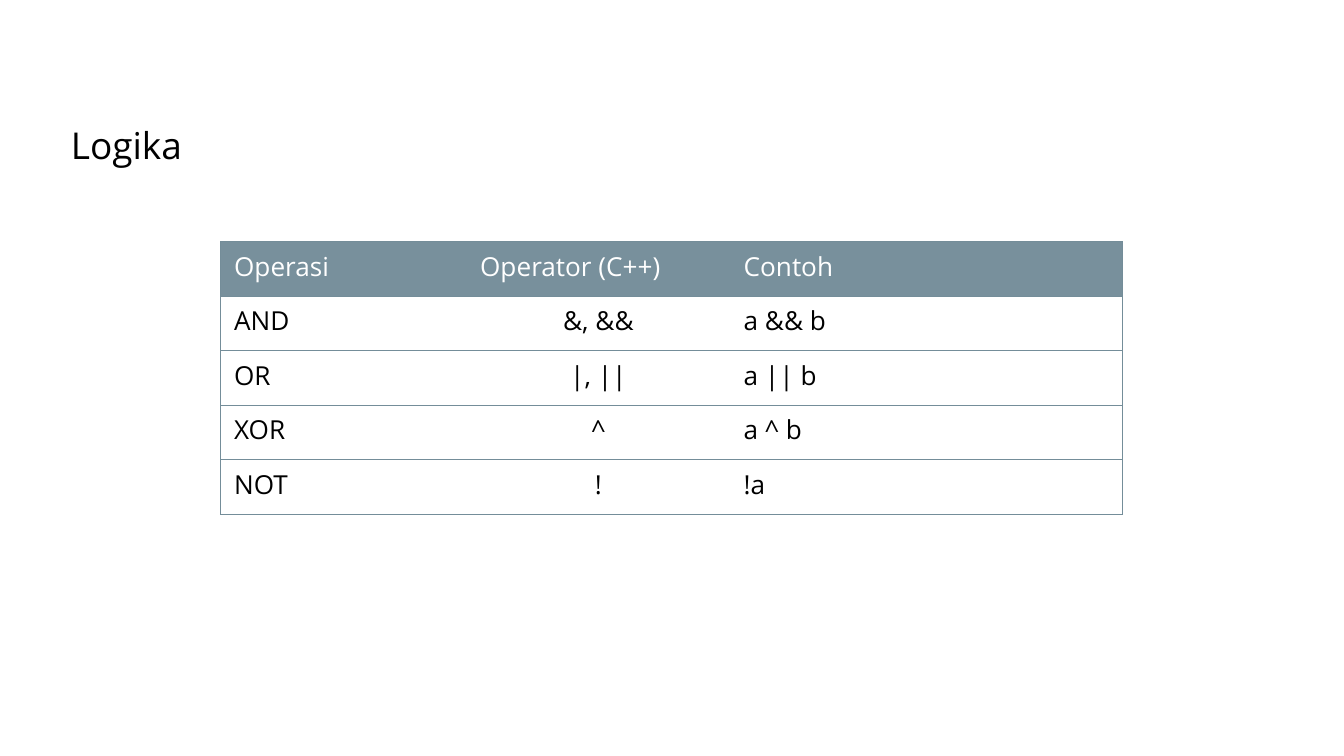
from lxml.etree import SubElement
from pptx import Presentation
from pptx.dml.color import RGBColor
from pptx.enum.text import MSO_ANCHOR, PP_ALIGN
from pptx.oxml.ns import qn
from pptx.util import Cm, Pt

BLACK = RGBColor(0x00, 0x00, 0x00)
WHITE = RGBColor(0xFF, 0xFF, 0xFF)
HEADER_FILL = RGBColor(0x78, 0x90, 0x9C)
BORDER = RGBColor(0x74, 0x8D, 0x99)

OPERATORS = [
    ("Operasi", "Operator (C++)", "Contoh"),
    ("AND", "&, &&", "a && b"),
    ("OR", "|, ||", "a || b"),
    ("XOR", "^", "a ^ b"),
    ("NOT", "!", "!a"),
]
COLUMN_WIDTHS = (4.65, 4.98, 7.42)
ROW_HEIGHT = 1.03


class SlideBuilder:
    font_name = "Open Sans"

    def __init__(self, presentation):
        self.slide = presentation.slides.add_slide(presentation.slide_layouts[5])

    def add_text(self, text_frame, text, size, color, alignment=PP_ALIGN.LEFT):
        paragraph = text_frame.paragraphs[0]
        paragraph.alignment = alignment
        run = paragraph.add_run()
        run.text = text
        formats = {"name": self.font_name, "size": Pt(size), "bold": False}
        for name, value in formats.items():
            setattr(run.font, name, value)
        run.font.color.rgb = color

    def add_title(self, text, left, top, width, height):
        title = self.slide.shapes.title
        position = {"left": left, "top": top, "width": width, "height": height}
        for name, value in position.items():
            setattr(title, name, Cm(value))
        text_frame = title.text_frame
        formats = {"vertical_anchor": MSO_ANCHOR.TOP, "word_wrap": True}
        for side in ("left", "top", "right", "bottom"):
            formats[f"margin_{side}"] = Cm(0.25)
        for name, value in formats.items():
            setattr(text_frame, name, value)
        self.add_text(text_frame, text, 19.8, BLACK)

    def set_borders(self, cell, visible_sides):
        properties = cell._tc.get_or_add_tcPr()
        for side in "LRTB":
            line = SubElement(properties, qn(f"a:ln{side}"), w=str(Pt(0.75)))
            if side in visible_sides:
                fill = SubElement(line, qn("a:solidFill"))
                SubElement(fill, qn("a:srgbClr"), val=str(BORDER))
            else:
                SubElement(line, qn("a:noFill"))

    def add_table(self, rows, left, top, column_widths, row_height):
        frame = self.slide.shapes.add_table(
            len(rows), len(column_widths), Cm(left), Cm(top),
            Cm(sum(column_widths)), Cm(row_height * len(rows)))
        table = frame.table
        table.horz_banding = False
        for column, width in zip(table.columns, column_widths):
            column.width = Cm(width)
        last_column = len(column_widths) - 1
        for row_index, texts in enumerate(rows):
            table.rows[row_index].height = Cm(row_height)
            is_header = row_index == 0
            for column_index, text in enumerate(texts):
                cell = table.cell(row_index, column_index)
                sides = "TB"
                if column_index == 0:
                    sides += "L"
                if column_index == last_column:
                    sides += "R"
                self.set_borders(cell, sides)
                if is_header:
                    cell.fill.solid()
                    cell.fill.fore_color.rgb = HEADER_FILL
                else:
                    cell.fill.background()
                centered = column_index == 1 and not is_header
                self.add_text(cell.text_frame, text, 14,
                              WHITE if is_header else BLACK,
                              PP_ALIGN.CENTER if centered else PP_ALIGN.LEFT)


def main():
    presentation = Presentation()
    presentation.slide_width = Cm(25.4)
    presentation.slide_height = Cm(14.29)
    builder = SlideBuilder(presentation)
    builder.add_title("Logika", 1.09, 2.06, 23.22, 1.09)
    builder.add_table(OPERATORS, 4.17, 4.57, COLUMN_WIDTHS, ROW_HEIGHT)
    presentation.save("out.pptx")


if __name__ == "__main__":
    main()
